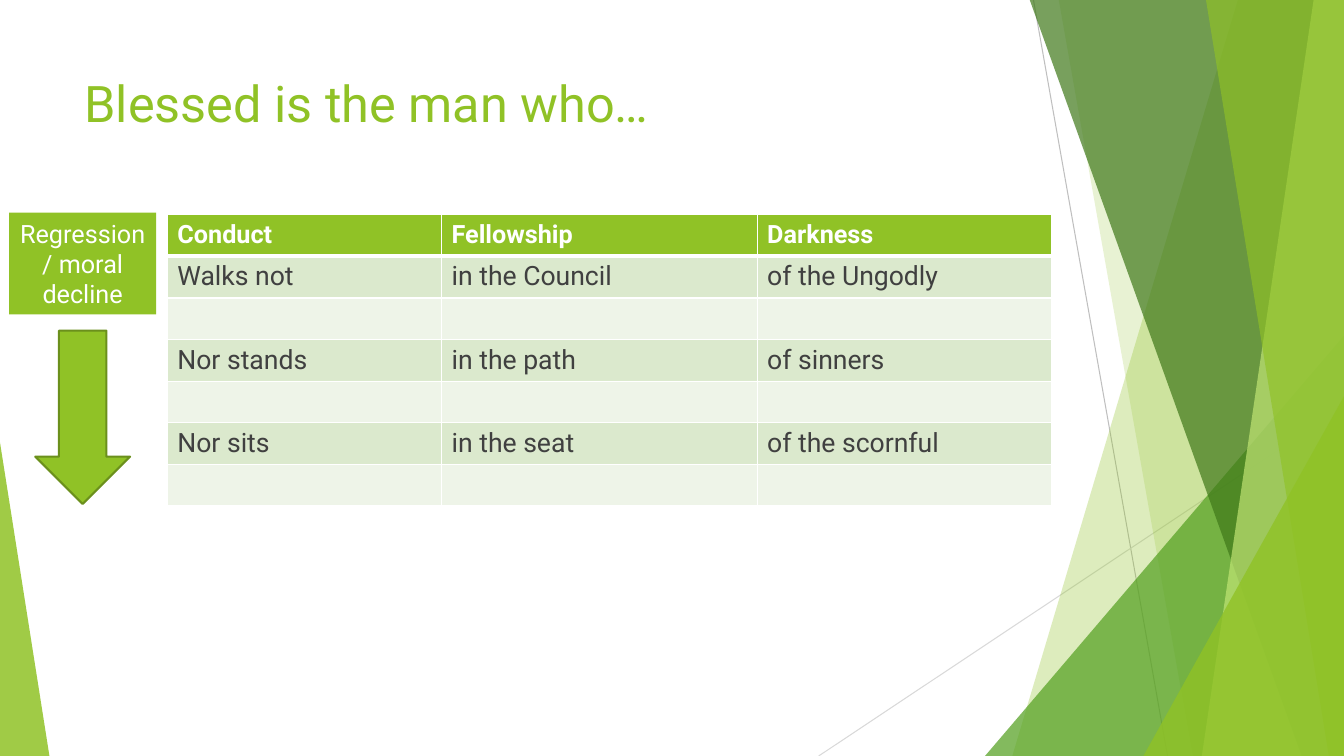
from lxml.etree import SubElement
from pptx import Presentation
from pptx.dml.color import RGBColor
from pptx.enum.shapes import MSO_CONNECTOR as Link, MSO_SHAPE as Preset
from pptx.enum.text import MSO_ANCHOR as Anchor, PP_ALIGN as Align
from pptx.oxml.ns import qn
from pptx.util import Pt

PX = 9144  # EMU per px, 100 px to the inch
WIDTH, HEIGHT = 1333, 750
FONT = "Roboto"
GREEN, DARK_GREEN, WHITE, GREY = "90C226", "6B901C", "FFFFFF", "404040"

TITLE = "Blessed is the man who…"
LABEL = "Regression / moral decline"
HEADINGS = ["Conduct", "Fellowship", "Darkness"]
PHRASES = [
    ["Walks not", "in the Council", "of the Ungodly"],
    ["Nor stands", "in the path", "of sinners"],
    ["Nor sits", "in the seat", "of the scornful"],
]
BLANK_ROW = ["", "", ""]
COLUMNS = [272, 313, 292]
ROW_HEIGHT = 41
ROW_FILLS = ["EEF4E8", "DBE9CD"]

# Backdrop: thin lines, then facets from back to front
THIN_LINES = [((1025, 0, 1158, 750), "BFBFBF"), ((1333, 403, 812, 750), "D9D9D9")]
# A band gives top left, top right, bottom left x; a triangle gives left, top, width, apex
FACETS = [
    ("band", (1228, 1004), GREEN, 30),
    ("band", (1050, 1183), GREEN, 20),
    ("triangle", (977, 333, 356, 1), "54A021", 72),
    ("band", (1021, 1291), "3F7819", 70),
    ("band", (1303, 1192), "C0E474", 70),
    ("band", (1196, 1318), GREEN, 65),
    ("triangle", (1134, 393, 199, 1), GREEN, 80),
    ("triangle", (0, 439, 49, 0), GREEN, 85),
]


def rgb(value):
    return RGBColor.from_string(value)


def px(*lengths):
    return [length * PX for length in lengths]


def paint(shape, color, opacity=100, outline=None):
    shape.shadow.inherit = False
    shape.fill.solid()
    shape.fill.fore_color.rgb = rgb(color)
    if opacity < 100:
        tone = shape._element.spPr.find(".//" + qn("a:srgbClr"))
        SubElement(tone, qn("a:alpha"), val=str(opacity * 1000))
    if outline:
        shape.line.color.rgb = rgb(outline)
        shape.line.width = Pt(1.5)
    else:
        shape.line.fill.background()


def write(frame, text, size, color, bold=False, align=Align.LEFT):
    para = frame.paragraphs[0]
    para.alignment = align
    span = para.add_run()
    span.text = text
    span.font.name, span.font.size, span.font.bold = FONT, Pt(size), bold
    span.font.color.rgb = rgb(color)


def add_borders(cell, bottom):
    props = cell._tc.get_or_add_tcPr()
    for index, (side, points) in enumerate(
        [("lnL", 1), ("lnR", 1), ("lnT", 1), ("lnB", bottom)]
    ):
        edge = SubElement(props, qn("a:" + side), w=str(Pt(points)))
        SubElement(SubElement(edge, qn("a:solidFill")), qn("a:srgbClr"), val=WHITE)
        props.insert(index, edge)  # borders come before the fill


deck = Presentation()
deck.slide_width, deck.slide_height = px(WIDTH, HEIGHT)
page = deck.slides.add_slide(deck.slide_layouts[6])
shapes = page.shapes

# Backdrop
for ends, color in THIN_LINES:
    line = shapes.add_connector(Link.STRAIGHT, *px(*ends))
    line.line.color.rgb = rgb(color)
    line.line.width = Pt(0.75)
    SubElement(line._element.spPr, qn("a:effectLst"))

for kind, place, color, opacity in FACETS:
    if kind == "band":
        top_left, bottom_left = place
        outline = shapes.build_freeform(top_left, -1, scale=PX)
        outline.add_line_segments(
            [(WIDTH, -1), (WIDTH, HEIGHT), (bottom_left, HEIGHT)], close=True
        )
        facet = outline.convert_to_shape()
    else:
        left, top, width, apex = place
        facet = shapes.add_shape(
            Preset.ISOSCELES_TRIANGLE, *px(left, top, width, HEIGHT - top)
        )
        facet.adjustments[0] = apex
    paint(facet, color, opacity)

# Title
title = shapes.add_textbox(*px(74, 67, 940, 144))
title.text_frame.word_wrap = True
write(title.text_frame, TITLE, 36, GREEN)

# Table: each phrase is followed by a blank row
rows = [HEADINGS]
for phrase in PHRASES:
    rows += [phrase, BLANK_ROW]
table = shapes.add_table(
    len(rows), len(COLUMNS), *px(166, 213, sum(COLUMNS), ROW_HEIGHT * len(rows))
).table
for column, width in zip(table.columns, COLUMNS):
    column.width = width * PX
for r, texts in enumerate(rows):
    table.rows[r].height = ROW_HEIGHT * PX
    header = r == 0
    for c, text in enumerate(texts):
        cell = table.cell(r, c)
        cell.fill.solid()
        cell.fill.fore_color.rgb = rgb(GREEN if header else ROW_FILLS[r % 2])
        add_borders(cell, bottom=3 if header else 1)
        if text:
            size, color = (18, WHITE) if header else (19, GREY)
            write(cell.text_frame, text, size, color, bold=header)

# Decline arrow and its label
arrow = shapes.add_shape(Preset.DOWN_ARROW, *px(35, 328, 94, 172))
paint(arrow, GREEN, outline=DARK_GREEN)
label = shapes.add_shape(Preset.RECTANGLE, *px(9, 211, 146, 101))
paint(label, GREEN)
label.text_frame.word_wrap = True
label.text_frame.vertical_anchor = Anchor.MIDDLE
write(label.text_frame, LABEL, 18, WHITE, align=Align.CENTER)

deck.save("out.pptx")
